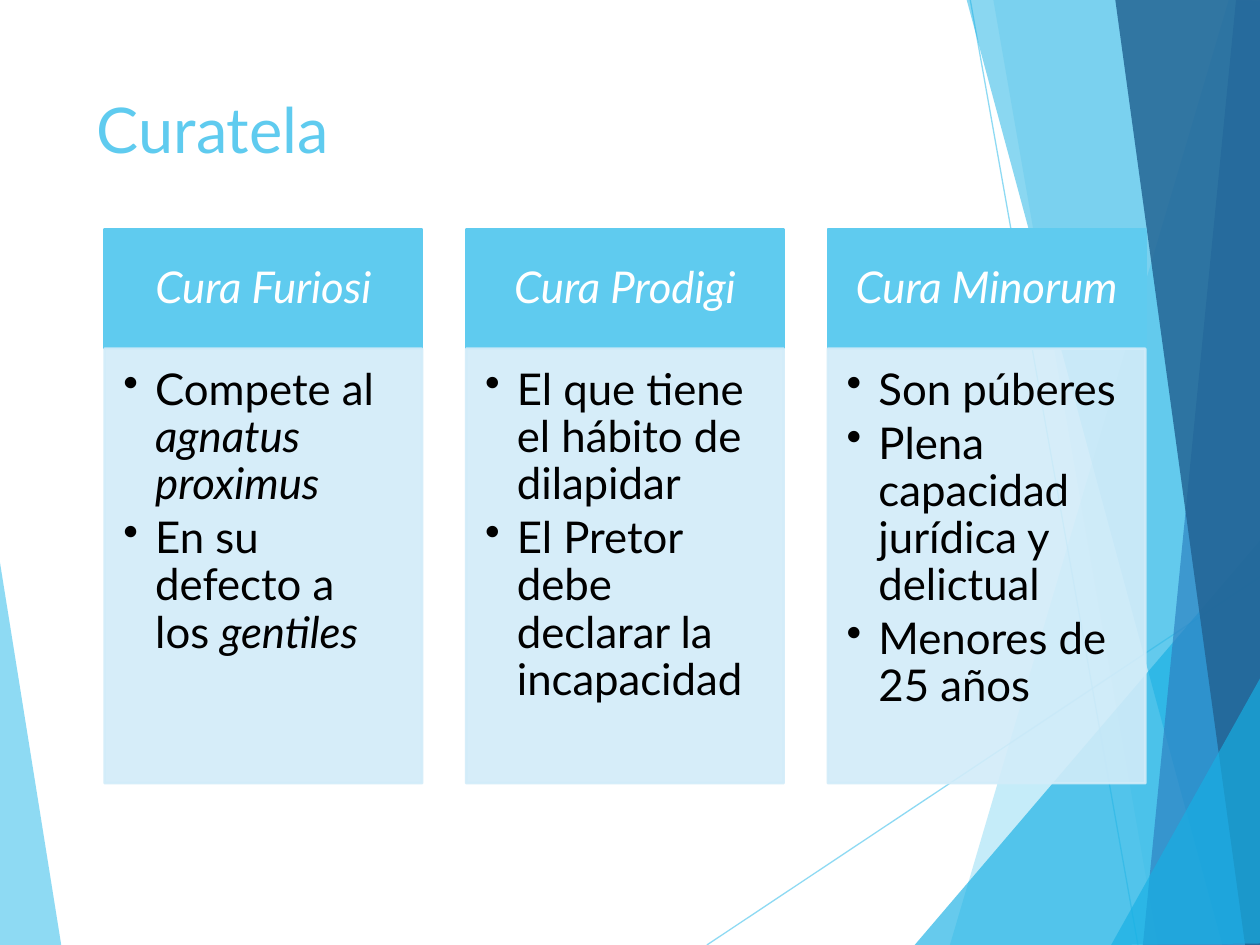
import pptx
import pptx.dml.color
import pptx.enum.shapes
import pptx.enum.text
import pptx.oxml.ns
import pptx.util
from lxml import etree
from pptx.util import Cm

SKY, CYAN, BLUE, NAVY = "5FCBEF", "17B0E4", "2E83C3", "226292"
PALE, WHITE, BLACK = "D2ECF9", "FFFFFF", "000000"
ALIGN = pptx.enum.text.PP_ALIGN
ANCHOR = pptx.enum.text.MSO_ANCHOR

LEFT_FACET = (SKY, 70, [(-0.03, 11.15), (1.24, 19.08), (-0.03, 19.05)])
RAYS = [(14.25, 19.05, 25.43, 11.61), (19.56, 0, 22.94, 19.05)]
RIGHT_FACETS = [
    (SKY, 36, [(24.77, 0), (19.15, 19.05), (25.45, 19.08), (25.43, 0.03)]),
    (SKY, 20, [(20.02, -0.03), (23.34, 19.05), (25.43, 19.05), (25.43, -0.03)]),
    (CYAN, 66, [(18.44, 19.05), (25.4, 10.9), (25.43, 19.05)]),
    (CYAN, 50, [(19.48, -0.03), (24.64, 19.05), (25.43, 19.02), (25.43, -0.03)]),
    (BLUE, 70, [(24.92, -0.03), (23.04, 19.05), (25.43, 19.05), (25.4, -0.03)]),
    (NAVY, 82, [(22.48, -0.03), (25.1, 19.05), (25.45, 19.05), (25.4, -0.03)]),
    (CYAN, 66, [(22.4, 19.05), (25.45, 13.59), (25.45, 19.02)]),
]
CARDS = [
    ("Cura Furiosi", [
        [("Compete al ", False), ("agnatus proximus", True)],
        [("En su defecto a los ", False), ("gentiles", True)],
    ]),
    ("Cura Prodigi", [
        [("El que tiene el hábito de dilapidar", False)],
        [("El Pretor debe declarar la incapacidad", False)],
    ]),
    ("Cura Minorum", [
        [("Son púberes", False)],
        [("Plena capacidad jurídica y delictual", False)],
        [("Menores de 25 años", False)],
    ]),
]


def color(value):
    return pptx.dml.color.RGBColor.from_string(value)


def set_opacity(shape, percent):
    for element in shape._element.spPr.iter(pptx.oxml.ns.qn("a:srgbClr")):
        alpha = etree.SubElement(element, pptx.oxml.ns.qn("a:alpha"))
        alpha.set("val", str(percent * 1000))


class SlideBuilder:
    """Draws styled elements on the current slide."""

    font = "Lato"
    body_size = 25
    title_size = 36

    def __init__(self, slide):
        self.slide = slide

    def run(self, paragraph, text, size, ink, italic=False):
        run = paragraph.add_run()
        run.text = text
        run.font.name = self.font
        run.font.size = pptx.util.Pt(size)
        run.font.italic = italic
        run.font.color.rgb = color(ink)

    def title(self, text, left, top, width, height):
        shape = self.slide.shapes.title
        shape.left, shape.top = Cm(left), Cm(top)
        shape.width, shape.height = Cm(width), Cm(height)
        shape.text_frame.vertical_anchor = ANCHOR.TOP
        paragraph = shape.text_frame.paragraphs[0]
        paragraph.alignment = ALIGN.LEFT
        self.run(paragraph, text, self.title_size, SKY)

    def facet(self, fill, opacity, points):
        start, *others = [(Cm(x), Cm(y)) for x, y in points]
        builder = self.slide.shapes.build_freeform(*start)
        builder.add_line_segments(others, close=True)
        shape = builder.convert_to_shape()
        shape.shadow.inherit = False
        shape.fill.solid()
        shape.fill.fore_color.rgb = color(fill)
        shape.line.fill.background()
        set_opacity(shape, opacity)

    def ray(self, *ends):
        connector = self.slide.shapes.add_connector(
            pptx.enum.shapes.MSO_CONNECTOR.STRAIGHT, *map(Cm, ends))
        connector.line.color.rgb = color(SKY)
        connector.line.width = pptx.util.Pt(0.75)
        set_opacity(connector, 70)
        etree.SubElement(connector._element.spPr, pptx.oxml.ns.qn("a:effectLst"))

    def panel(self, box, fill, opacity, margins, anchor):
        shape = self.slide.shapes.add_shape(
            pptx.enum.shapes.MSO_SHAPE.RECTANGLE, *map(Cm, box))
        shape.shadow.inherit = False
        shape.fill.solid()
        shape.fill.fore_color.rgb = color(fill)
        shape.line.color.rgb = color(fill)
        shape.line.width = pptx.util.Pt(1.5)
        set_opacity(shape, opacity)
        frame = shape.text_frame
        frame.word_wrap = True
        frame.vertical_anchor = anchor
        (frame.margin_left, frame.margin_top,
         frame.margin_right, frame.margin_bottom) = map(Cm, margins)
        return frame

    def header(self, text, box):
        frame = self.panel(box, SKY, 100, (0.48, 0.28, 0.48, 0.28), ANCHOR.MIDDLE)
        paragraph = frame.paragraphs[0]
        paragraph.alignment = ALIGN.CENTER
        paragraph.line_spacing = 0.9
        self.run(paragraph, text, self.body_size, WHITE, italic=True)

    def bullets(self, items, box):
        frame = self.panel(box, PALE, 90, (0.38, 0.38, 0.48, 0.56), ANCHOR.TOP)
        for index, item in enumerate(items):
            paragraph = frame.add_paragraph() if index else frame.paragraphs[0]
            paragraph.alignment = ALIGN.LEFT
            paragraph.line_spacing = 0.9
            paragraph.space_after = pptx.util.Pt(3.75)
            properties = paragraph._p.get_or_add_pPr()
            properties.set("marL", str(Cm(0.64)))
            properties.set("indent", str(-Cm(0.64)))
            bullet = etree.SubElement(properties, pptx.oxml.ns.qn("a:buChar"))
            bullet.set("char", "•")
            for text, italic in item:
                self.run(paragraph, text, self.body_size, BLACK, italic)


def main():
    presentation = pptx.Presentation()
    presentation.slide_width = Cm(25.4)
    presentation.slide_height = Cm(19.05)
    slide = presentation.slides.add_slide(presentation.slide_layouts[5])
    builder = SlideBuilder(slide)

    builder.facet(*LEFT_FACET)
    for ray in RAYS:
        builder.ray(*ray)
    for facet in RIGHT_FACETS:
        builder.facet(*facet)

    builder.title("Curatela", 1.7, 1.7, 17.63, 3.66)
    for column, (heading, items) in enumerate(CARDS):
        left = 2.11 + column * 7.29
        builder.header(heading, (left, 4.62, 6.4, 2.41))
        builder.bullets(items, (left, 7.03, 6.4, 8.76))

    presentation.save("out.pptx")


if __name__ == "__main__":
    main()
